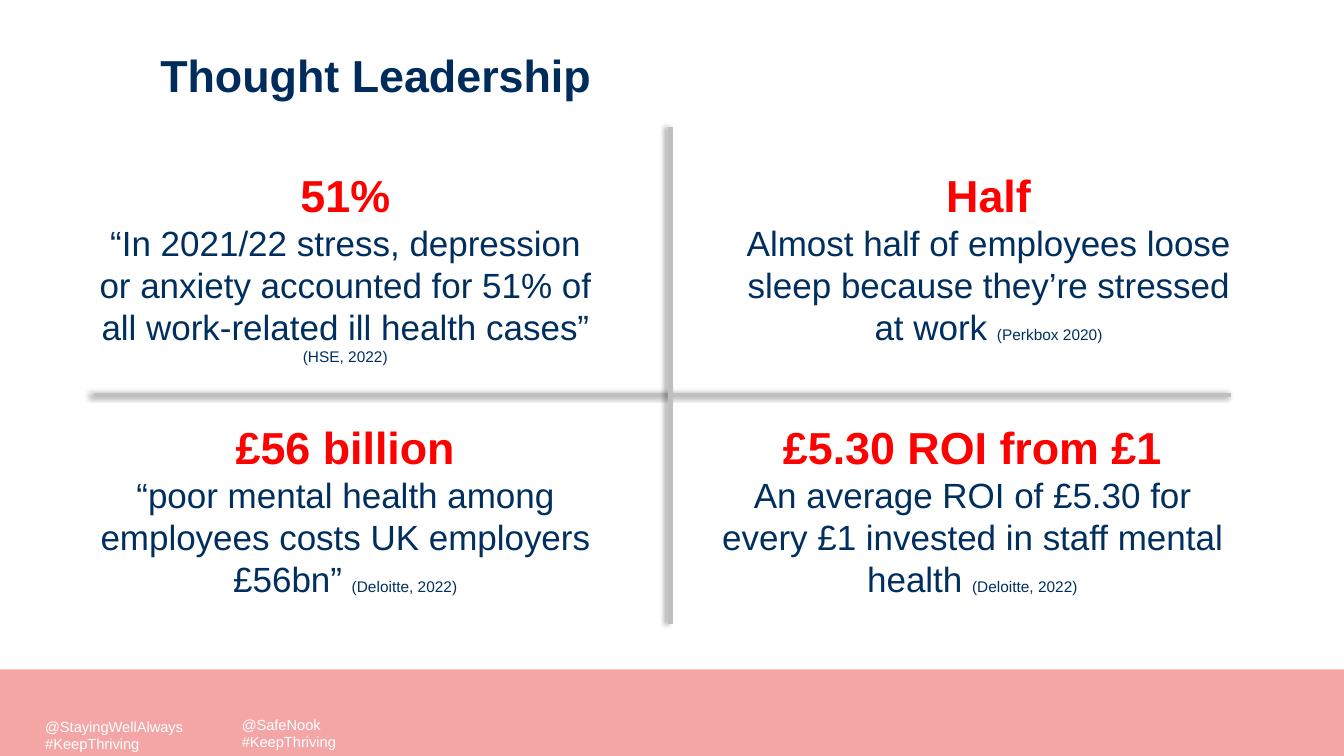
from lxml import etree
from pptx import Presentation
from pptx.dml.color import RGBColor
from pptx.enum.shapes import MSO_CONNECTOR, MSO_SHAPE
from pptx.enum.text import MSO_AUTO_SIZE, PP_ALIGN
from pptx.oxml import parse_xml
from pptx.oxml.ns import nsdecls
from pptx.util import Inches, Pt

NAVY, RED, WHITE = "002F5F", "FF0000", "FFFFFF"
SHADOW = (
    f'<a:effectLst {nsdecls("a")}><a:outerShdw blurRad="{Pt(4)}" dist="{Pt(3)}" '
    'dir="10800000" algn="r" rotWithShape="0"><a:srgbClr val="000000">'
    '<a:alpha val="40000"/></a:srgbClr></a:outerShdw></a:effectLst>'
)


def color(value):
    return RGBColor.from_string(value)


def add_text(box, paragraphs, margin=None, align=PP_ALIGN.LEFT):
    """Add a text box; each paragraph is a list of (text, size, colour, bold) runs."""
    frame = slide.shapes.add_textbox(*map(Inches, box)).text_frame
    frame.word_wrap = True
    if margin is not None:
        frame.auto_size = MSO_AUTO_SIZE.SHAPE_TO_FIT_TEXT
        for side in ("left", "top", "right", "bottom"):
            setattr(frame, f"margin_{side}", margin)
    for index, runs in enumerate(paragraphs):
        paragraph = frame.add_paragraph() if index else frame.paragraphs[0]
        paragraph.alignment = align
        for text, size, hex_color, bold in runs:
            run = paragraph.add_run()
            run.text = text
            run.font.color.rgb = color(hex_color)
            font_format = {"name": "Arial", "size": Pt(size), "bold": bold}
            for name, value in font_format.items():
                setattr(run.font, name, value)
    return frame


presentation = Presentation()
presentation.slide_width = Inches(13.33)
presentation.slide_height = Inches(7.5)
slide = presentation.slides.add_slide(presentation.slide_layouts[6])

# Footer band with social handles
band = slide.shapes.add_shape(
    MSO_SHAPE.RECTANGLE, Inches(0), Inches(6.64), Inches(13.33), Inches(0.86))
band.shadow.inherit = False
band.fill.solid()
band.fill.fore_color.rgb = color("F4A6A6")
band.line.fill.background()

for left, top, handle in [(0.35, 7.07, "@StayingWellAlways"), (2.3, 7.05, "@SafeNook")]:
    lines = [[(text, 10.5, WHITE, False)] for text in (handle, "#KeepThriving")]
    add_text((left, top, 5.54, 0.43), lines)

# Title
title = add_text((1.59, 0.54, 11.34, 0.46),
                 [[("Thought Leadership", 32, "002C5C", True)]], margin=0)
title.paragraphs[0].line_spacing = Pt(33.4)

# Four statistics
statistics = [
    (0.9, 1.66, 1.99, "51%",
     "“In 2021/22 stress, depression or anxiety accounted for 51% of all "
     "work-related ill health cases” ", "(HSE, 2022)"),
    (7.28, 1.66, 1.8, "Half",
     "Almost half of employees loose sleep because they’re stressed at work ",
     "(Perkbox 2020)"),
    (0.9, 4.16, 1.8, "£56 billion",
     "“poor mental health among employees costs UK employers £56bn” ",
     "(Deloitte, 2022)"),
    (7.12, 4.16, 1.8, "£5.30 ROI from £1",
     "An average ROI of £5.30 for every £1 invested in staff mental health ",
     "(Deloitte, 2022)"),
]
for left, top, height, figure, statement, citation in statistics:
    add_text((left, top, 5.05, height),
             [[(figure, 32, RED, True)],
              [(statement, 25, NAVY, False), (citation, 11, NAVY, False)]],
             margin=0, align=PP_ALIGN.CENTER)

# Dividing cross
for ends in [(0.93, 3.92, 12.21, 3.92), (6.65, 6.19, 6.65, 1.26)]:
    divider = slide.shapes.add_connector(MSO_CONNECTOR.STRAIGHT, *map(Inches, ends))
    divider.line.color.rgb = color("BFBFBF")
    divider.line.width = Pt(3)
    divider._element.spPr.append(parse_xml(SHADOW))

presentation.save("out.pptx")
